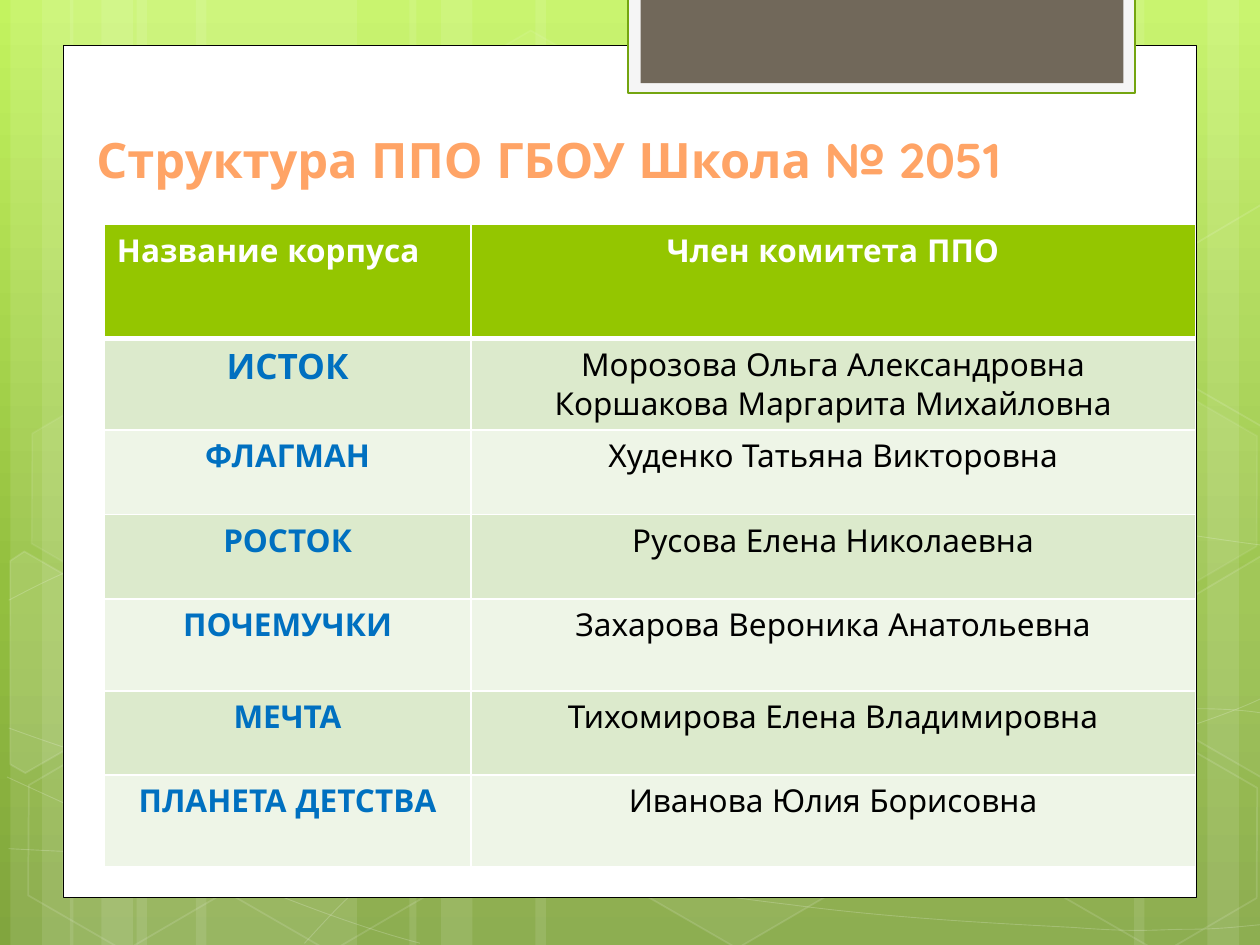
from copy import deepcopy
from dataclasses import dataclass
from typing import Optional

from lxml import etree
from pptx import Presentation
from pptx import util as u
from pptx.dml.color import RGBColor
from pptx.enum import shapes, text
from pptx.oxml import ns

COLORS = {
    "white": "FFFFFF", "black": "000000", "panel": "F5F5F5", "brown": "71685A",
    "edge": "74A510", "title": "FFA466", "head": "94C600", "label": "0070C0",
    "odd": "DCEACC", "even": "EEF5E7",
}
BACKGROUND = [(0, "C3F35F"), (0.62, "93BF3F"), (1, "81A53E")]
FONT = "Quicksand"
SLIDE_WIDTH, SLIDE_HEIGHT = 720, 540
Point = tuple[float, float]


@dataclass
class Paint:
    """Fill and line colours, with opacity in percent and line width in points."""
    fill: Optional[str] = None
    fill_alpha: int = 100
    line: Optional[str] = None
    width: float = 1
    line_alpha: int = 100


@dataclass
class Hexagon:
    left: float
    top: float
    fill_alpha: int
    line_alpha: int


@dataclass
class CutHexagon:
    left: float
    top: float
    fill_alpha: int
    points: list[Point]


@dataclass
class Building:
    name: str
    members: str
    height: float
    size: float = 18


# Left edge and width of the pale vertical bands
STRIPES = [(78, 126), (6, 36), (24, 60), (112, 126), (40, 36), (58, 60),
           (528, 126), (690, 36), (648, 60), (306, 222), (234, 36), (252, 60)]

# Cubic curves: a start point, then three points for each segment
CURVES = [
    [(5, 485), (44, 487), (83, 489), (137, 488), (191, 487), (258, 486), (330, 479),
     (402, 472), (504, 458), (570, 444), (636, 431), (703, 409), (725, 397)],
    [(5, 343), (26, 332), (47, 321), (87, 310), (128, 300), (186, 284), (250, 279),
     (314, 274), (392, 273), (471, 279), (550, 284), (682, 307), (725, 312)],
    [(4, 444), (91, 484), (178, 523), (240, 539)],
    [(5, 416), (27, 424), (50, 432), (92, 444), (134, 454), (197, 472), (257, 485),
     (317, 497), (392, 510), (452, 517), (512, 525), (576, 528), (614, 530),
     (652, 533), (662, 531), (680, 531), (699, 531), (712, 529), (725, 528)],
    [(174, 539), (187, 525), (200, 510), (217, 498), (235, 485), (259, 470), (279, 460),
     (300, 450), (312, 446), (338, 438), (364, 431), (413, 421), (438, 416),
     (464, 411), (467, 411), (490, 410), (512, 408), (547, 405), (572, 405),
     (597, 404), (638, 405), (638, 405), (638, 405), (686, 405), (686, 405),
     (699, 405), (711, 406), (718, 407), (724, 408), (722, 407), (724, 408)],
]

HEXAGONS = [
    Hexagon(240.5, 26, 4, 8), Hexagon(358, 424, 6, 12), Hexagon(8, 425.5, 0, 12),
    Hexagon(10, 224.5, 7, 8), Hexagon(125.5, 426, 0, 12), Hexagon(542, 326, 10, 12),
    Hexagon(600.5, 427, 0, 12), Hexagon(600.5, 226, 7, 8),
]

# Hexagons cut off by the slide's edges, with points relative to their own corner
LEFT_CUT = [(0, 8.7), (4.3, 0), (68, 0), (99.4, 55.3), (68.1, 109.4), (58.2, 109.4)]
RIGHT_CUT = [(0, 54.2), (30.5, 0), (37.4, 0), (97.9, 104), (94.6, 109.4), (31.2, 109.4)]
CUT_HEXAGONS = [
    CutHexagon(-23.8, 330.5, 10, LEFT_CUT),
    CutHexagon(660.2, 319.7, 4, RIGHT_CUT),
    CutHexagon(660.2, 119, 0, RIGHT_CUT),
]

HEADINGS = ["Название корпуса", "Член комитета ППО"]
BUILDINGS = [
    Building("ИСТОК", "Морозова Ольга Александровна\nКоршакова Маргарита Михайловна", 52.2, 20),
    Building("ФЛАГМАН", "Худенко Татьяна Викторовна", 48.4),
    Building("РОСТОК", "Русова Елена Николаевна", 48.4),
    Building("ПОЧЕМУЧКИ", "Захарова Вероника Анатольевна", 52.4),
    Building("МЕЧТА", "Тихомирова Елена Владимировна", 48.2),
    Building("ПЛАНЕТА ДЕТСТВА", "Иванова Юлия Борисовна", 52.4),
]


def rgb(name: str) -> RGBColor:
    return RGBColor.from_string(COLORS[name])


def set_alpha(parent, percent: int) -> None:
    color = parent.find(".//" + ns.qn("a:srgbClr"))
    etree.SubElement(color, ns.qn("a:alpha"), val=str(percent * 1000))


def apply_paint(shape, paint: Paint) -> None:
    shape.shadow.inherit = False
    properties = shape.element.spPr
    if paint.fill and paint.fill_alpha:
        shape.fill.solid()
        shape.fill.fore_color.rgb = rgb(paint.fill)
        if paint.fill_alpha < 100:
            set_alpha(properties.find(ns.qn("a:solidFill")), paint.fill_alpha)
    else:
        shape.fill.background()
    if paint.line:
        shape.line.color.rgb = rgb(paint.line)
        shape.line.width = u.Pt(paint.width)
        if paint.line_alpha < 100:
            set_alpha(properties.find(ns.qn("a:ln")), paint.line_alpha)
    else:
        shape.line.fill.background()


def add_preset(page, kind, left: float, top: float, width: float, height: float, paint: Paint):
    shape = page.shapes.add_shape(kind, u.Pt(left), u.Pt(top), u.Pt(width), u.Pt(height))
    apply_paint(shape, paint)
    return shape


def add_outline(page, points: list[Point], closed: bool, paint: Paint):
    start, *rest = [(u.Pt(x), u.Pt(y)) for x, y in points]
    builder = page.shapes.build_freeform(*start)
    builder.add_line_segments(rest, close=closed)
    shape = builder.convert_to_shape()
    apply_paint(shape, paint)
    return shape


def add_curve(page, points: list[Point], paint: Paint) -> None:
    """Draw the control points as lines, then join each three into one cubic segment."""
    shape = add_outline(page, points, False, paint)
    lines = list(shape.element.iter(ns.qn("a:lnTo")))
    for first in range(0, len(lines), 3):
        curve = etree.Element(ns.qn("a:cubicBezTo"))
        lines[first].addprevious(curve)
        for line in lines[first:first + 3]:
            curve.append(line[0])
            line.getparent().remove(line)


def format_text(frame, size: float, color: str, bold: bool, align) -> None:
    for para in frame.paragraphs:
        para.alignment = align
        for span in para.runs:
            span.font.name, span.font.size, span.font.bold = FONT, u.Pt(size), bold
            span.font.color.rgb = rgb(color)


def fill_cell(cell, words: str, fill: str, size: float, color: str, bold: bool, align,
              top: float = 1, bottom: float = 1) -> None:
    cell.text_frame.text = words
    format_text(cell.text_frame, size, color, bold, align)
    cell.fill.solid()
    cell.fill.fore_color.rgb = rgb(fill)
    properties = cell._tc.get_or_add_tcPr()
    for place, (side, width) in enumerate(zip("LRTB", (1, 1, top, bottom))):
        border = etree.Element(ns.qn("a:ln" + side), w=str(u.Pt(width)))
        paint = etree.SubElement(border, ns.qn("a:solidFill"))
        etree.SubElement(paint, ns.qn("a:srgbClr"), val=COLORS["white"])
        properties.insert(place, border)


def draw_background(page) -> None:
    fill = page.background.fill
    fill.gradient()
    fill.gradient_angle = 270
    stop_list = page.element.find(".//" + ns.qn("a:gsLst"))
    stop_list.append(deepcopy(stop_list[0]))
    for stop, (position, color) in zip(fill.gradient_stops, BACKGROUND):
        stop.position = position
        stop.color.rgb = RGBColor.from_string(color)

    for left, width in STRIPES:
        add_preset(page, shapes.MSO_SHAPE.RECTANGLE, left, 0, width, SLIDE_HEIGHT,
                   Paint("white", 10))
    for points in CURVES:
        add_curve(page, points, Paint(line="white", width=0.5, line_alpha=20))
    for item in HEXAGONS:
        shape = add_preset(page, shapes.MSO_SHAPE.HEXAGON, item.left, item.top, 126, 109.4,
                           Paint("white", item.fill_alpha, "white", 1, item.line_alpha))
        shape.rotation = 30
        shape.adjustments[0], shape.adjustments[1] = 0.285, 1.155
    for item in CUT_HEXAGONS:
        points = [(item.left + x, item.top + y) for x, y in item.points]
        shape = add_outline(page, points, True, Paint("white", item.fill_alpha, "white", 1, 12))
        shape.rotation = 30


def draw_table(page) -> None:
    center, left = text.PP_ALIGN.CENTER, text.PP_ALIGN.LEFT
    heights = [65.2] + [building.height for building in BUILDINGS]
    table = page.shapes.add_table(len(heights), 2, u.Pt(59.6), u.Pt(128.2), u.Pt(623.5),
                                  u.Pt(sum(heights))).table
    table.horz_banding = False
    for column, width in zip(table.columns, (209.5, 414)):
        column.width = u.Pt(width)
    for row, height in zip(table.rows, heights):
        row.height = u.Pt(height)
    for column, (heading, align) in enumerate(zip(HEADINGS, (left, center))):
        fill_cell(table.cell(0, column), heading, "head", 18, "white", True, align, bottom=3)
    for row, building in enumerate(BUILDINGS, 1):
        fill = "odd" if row % 2 else "even"
        top = 3 if row == 1 else 1
        fill_cell(table.cell(row, 0), building.name, fill, building.size, "label", True,
                  center, top)
        fill_cell(table.cell(row, 1), building.members, fill, 18, "black", False, center, top)


def main() -> None:
    deck = Presentation()
    deck.slide_width, deck.slide_height = u.Pt(SLIDE_WIDTH), u.Pt(SLIDE_HEIGHT)
    page = deck.slides.add_slide(deck.slide_layouts[6])
    draw_background(page)

    # White sheet and the tab at its top
    rectangle = shapes.MSO_SHAPE.RECTANGLE
    add_preset(page, rectangle, 36, 26, 648, 487, Paint("white", line="black", width=0.5))
    add_preset(page, rectangle, 359, -1.5, 289.5, 54.7, Paint("panel", line="edge", width=1.25))
    add_preset(page, rectangle, 366, -1.5, 276, 49, Paint("brown"))

    # Title
    box = page.shapes.add_textbox(u.Pt(48), u.Pt(71.3), u.Pt(635), u.Pt(39.6))
    frame = box.text_frame
    frame.word_wrap = True
    frame.vertical_anchor = text.MSO_ANCHOR.BOTTOM
    frame.text = "Структура ППО ГБОУ Школа № 2051"
    format_text(frame, 27.9, "title", True, text.PP_ALIGN.LEFT)

    draw_table(page)
    deck.save("out.pptx")


if __name__ == "__main__":
    main()
